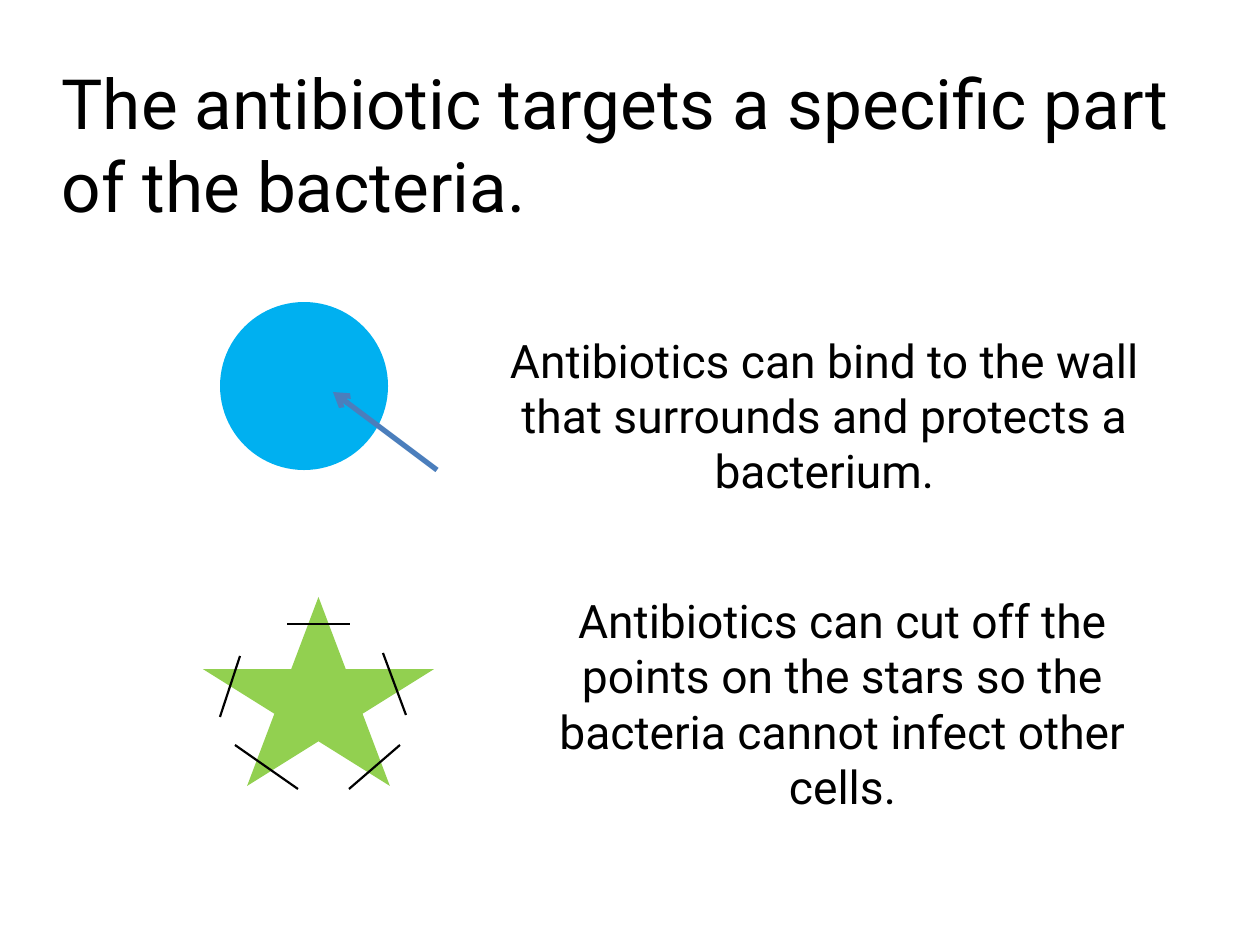
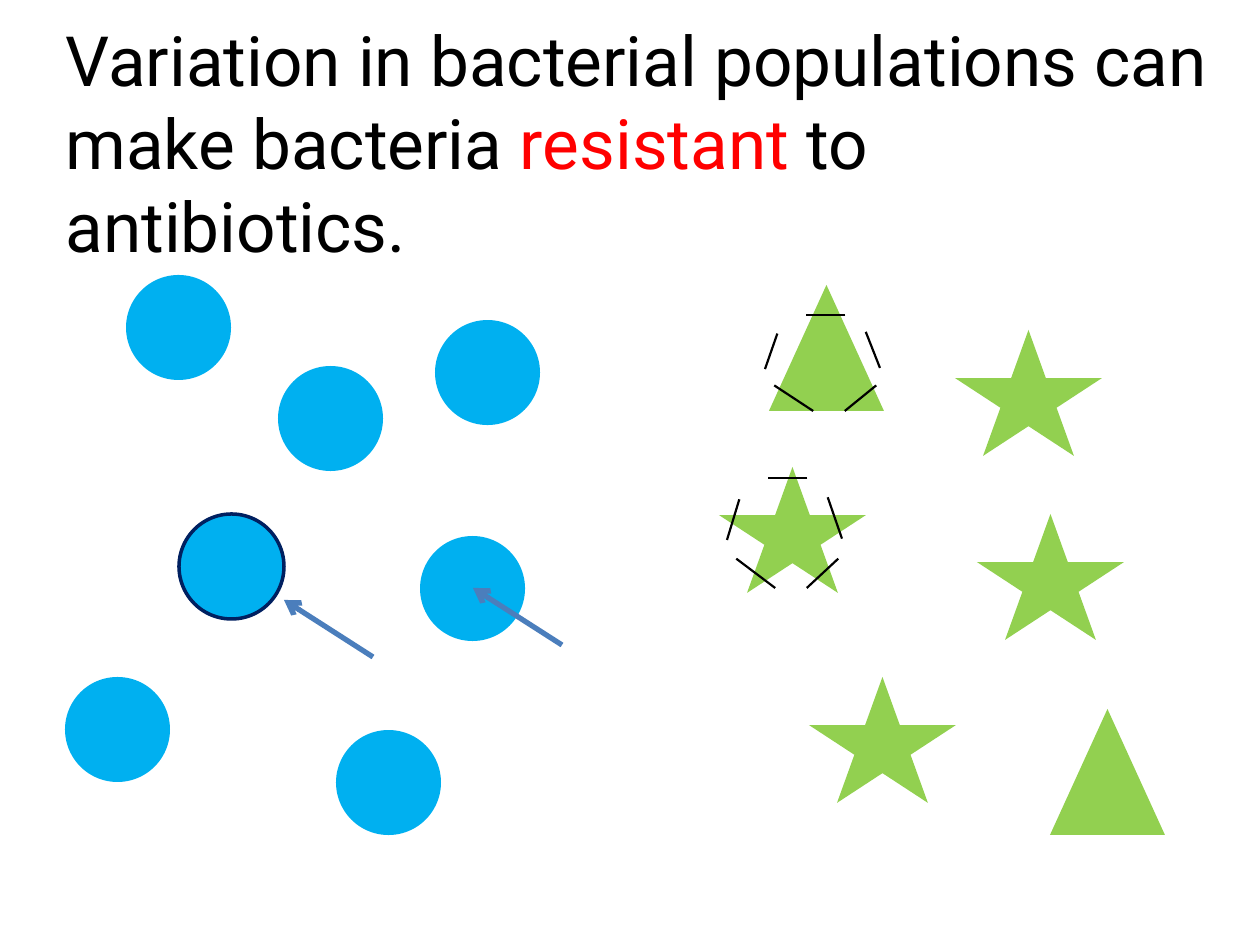
from lxml.etree import SubElement
from pptx import Presentation
from pptx.dml.color import RGBColor
from pptx.enum.shapes import MSO_CONNECTOR, MSO_SHAPE
from pptx.enum.text import MSO_ANCHOR, MSO_AUTO_SIZE, PP_ALIGN
from pptx.oxml.ns import qn
from pptx.util import Pt

BLACK = RGBColor(0x00, 0x00, 0x00)
RED = RGBColor(0xFF, 0x00, 0x00)
BLUE = RGBColor(0x00, 0xB0, 0xF0)
NAVY = RGBColor(0x00, 0x20, 0x60)
STEEL = RGBColor(0x4B, 0x7E, 0xBC)
GREEN = RGBColor(0x92, 0xD0, 0x50)

FONT = "Roboto"
TITLE_SIZE, BODY_SIZE = Pt(39.6), Pt(26.4)
PX_PER_INCH = 126
TITLE_ONLY = 5

# Cut marks around a star, drawn in a frame of this size
CUT_FRAME = (186, 165)
CUT_MARKS = [
    ((20, 32), (0, 93)),
    ((186, 91), (163, 29)),
    ((130, 0), (67, 0)),
    ((78, 165), (15, 121)),
    ((180, 121), (129, 165)),
]


def px(length):
    return round(length * 914400 / PX_PER_INCH)


def write(frame, spans, size, align):
    """Fill a text frame with one paragraph of (text, colour) spans."""
    frame.word_wrap = True
    frame.auto_size = MSO_AUTO_SIZE.NONE
    frame.vertical_anchor = MSO_ANCHOR.MIDDLE
    para = frame.paragraphs[0]
    para.alignment = align
    for text, colour in spans:
        span = para.add_run()
        span.text = text
        span.font.name = FONT
        span.font.size = size
        span.font.color.rgb = colour


def add_page(deck, title_box, title_spans):
    page = deck.slides.add_slide(deck.slide_layouts[TITLE_ONLY])
    title = page.shapes.title
    title.left, title.top, title.width, title.height = map(px, title_box)
    write(title.text_frame, title_spans, TITLE_SIZE, PP_ALIGN.LEFT)
    return page


def add_caption(page, box, text):
    caption = page.shapes.add_textbox(*map(px, box))
    write(caption.text_frame, [(text, BLACK)], BODY_SIZE, PP_ALIGN.CENTER)


def add_bacterium(page, kind, box, fill):
    bacterium = page.shapes.add_shape(kind, *map(px, box))
    bacterium.shadow.inherit = False
    bacterium.fill.solid()
    bacterium.fill.fore_color.rgb = fill
    bacterium.line.fill.background()
    return bacterium


def add_line(shapes, start, end, colour, width):
    line = shapes.add_connector(MSO_CONNECTOR.STRAIGHT, *map(px, (*start, *end)))
    line.line.color.rgb = colour
    line.line.width = Pt(width)
    SubElement(line._element.spPr, qn("a:effectLst"))
    return line


def add_antibiotic_arrow(page, start, end):
    arrow = add_line(page.shapes, start, end, STEEL, 3)
    SubElement(arrow.line._get_or_add_ln(), qn("a:tailEnd"), type="arrow")


def add_cuts(page, box):
    """Scale the five cut marks into the box, as one group."""
    left, top, width, height = box
    group = page.shapes.add_group_shape()

    def place(point):
        return (left + point[0] * width / CUT_FRAME[0],
                top + point[1] * height / CUT_FRAME[1])

    for start, end in CUT_MARKS:
        add_line(group.shapes, place(start), place(end), BLACK, 1.25)


def build_targets(deck):
    page = add_page(deck, (49, 64, 1144, 158), [
        ("The antibiotic targets a specific part of the bacteria.", BLACK)])

    # Round bacterium: the antibiotic binds to its wall
    add_bacterium(page, MSO_SHAPE.OVAL, (220, 302, 168, 168), BLUE)
    add_caption(page, (473, 336, 703, 158),
                "Antibiotics can bind to the wall that surrounds and protects "
                "a bacterium.")
    add_antibiotic_arrow(page, (437, 470), (333, 392))

    # Star bacterium: the antibiotic cuts off its points
    add_bacterium(page, MSO_SHAPE.STAR_5_POINT, (203, 597, 231, 189), GREEN)
    add_caption(page, (504, 597, 677, 212),
                "Antibiotics can cut off the points on the stars so the "
                "bacteria cannot infect other cells.")
    add_cuts(page, (220, 624, 186, 165))


def build_variation(deck):
    page = add_page(deck, (53, 63, 1172, 158), [
        ("Variation in bacterial populations can make bacteria ", BLACK),
        ("resistant", RED),
        (" to antibiotics.", BLACK)])

    # Round population, with one thick-walled variant
    for left, top in [(126, 275), (278, 366), (420, 536), (336, 730),
                      (435, 320), (65, 677)]:
        add_bacterium(page, MSO_SHAPE.OVAL, (left, top, 105, 105), BLUE)
    resistant = add_bacterium(page, MSO_SHAPE.OVAL, (179, 514, 105, 105), BLUE)
    resistant.line.color.rgb = NAVY
    resistant.line.width = Pt(2)
    for left, top in [(284, 600), (473, 588)]:
        add_antibiotic_arrow(page, (left + 89, top + 57), (left, top))

    # Star population, with triangular variants
    for left, top in [(719, 467), (977, 514), (955, 330), (809, 677)]:
        add_bacterium(page, MSO_SHAPE.STAR_5_POINT, (left, top, 147, 126), GREEN)
    for left, top in [(769, 285), (1050, 709)]:
        add_bacterium(page, MSO_SHAPE.FLOWCHART_EXTRACT,
                      (left, top, 115, 126), GREEN)
    add_cuts(page, (727, 478, 115, 110))
    add_cuts(page, (765, 315, 115, 96))


def main():
    deck = Presentation()
    deck.slide_width, deck.slide_height = px(1260), px(945)
    build_targets(deck)
    build_variation(deck)
    deck.save("out.pptx")


if __name__ == "__main__":
    main()
